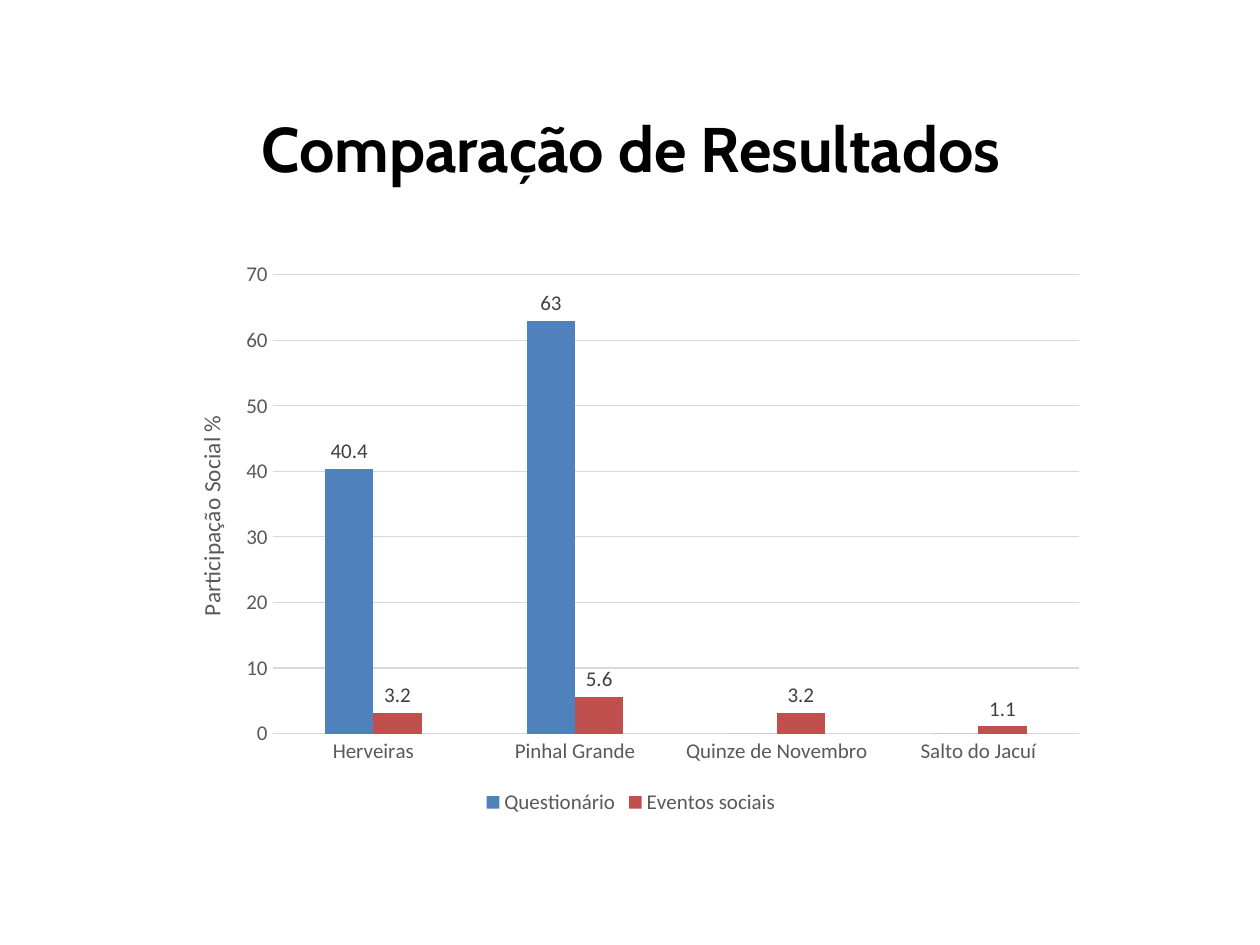
from dataclasses import dataclass

from pptx import Presentation
from pptx import util as u
from pptx.chart import data as cd
from pptx.dml.color import RGBColor
from pptx.enum import chart as ce, text as te
from pptx.oxml import parse_xml
from pptx.oxml.ns import nsdecls

PX = 914400 / 126
INK = {"title": "000000", "text": "595959", "label": "404040",
       "grid": "D9D9D9", "blue": "4F81BD", "red": "C0504D"}
TOWNS = ["Herveiras", "Pinhal Grande", "Quinze de Novembro", "Salto do Jacuí"]


@dataclass
class Bars:
    name: str
    vals: list[float]
    ink: str


SETS = [Bars("Questionário", [40.4, 63, 0, 0], "blue"),
        Bars("Eventos sociais", [3.2, 5.6, 3.2, 1.1], "red")]


def px(n: int) -> u.Emu:
    return u.Emu(round(n * PX))


def tint(ink: str) -> RGBColor:
    return RGBColor.from_string(INK[ink])


def style(font, size: float, ink: str, face: str = "Calibri", bold: bool = False) -> None:
    font.size, font.name, font.bold = u.Pt(size), face, bold
    font.color.rgb = tint(ink)


def rule(line) -> None:
    line.color.rgb = tint("grid")
    line.width = u.Pt(0.75)


def layout(inner: bool = False, **spots: float):
    """Manual chart layout; spots are fractions of the chart size."""
    tags = '<c:layoutTarget val="inner"/>' if inner else ""
    tags += "".join(f'<c:{k}Mode val="edge"/>' for k in "xy")
    tags += "".join(f'<c:{k} val="{v}"/>' for k, v in spots.items())
    return parse_xml(f'<c:layout {nsdecls("c")}><c:manualLayout>{tags}'
                     '</c:manualLayout></c:layout>')


def place(parent, node, after) -> None:
    for old in parent.findall(node.tag):
        parent.remove(old)
    if after is None:
        parent.insert(0, node)
    else:
        after.addnext(node)


def draw_title(slide) -> None:
    box = slide.shapes.title
    box.left, box.top, box.width, box.height = map(px, (139, 103, 984, 127))
    frame = box.text_frame
    frame.text = "Comparação de Resultados"
    frame.word_wrap = True
    frame.auto_size = te.MSO_AUTO_SIZE.NONE
    frame.vertical_anchor = te.MSO_ANCHOR.TOP
    para = frame.paragraphs[0]
    para.alignment = te.PP_ALIGN.CENTER
    style(para.runs[0].font, 36, "title", "Cabin", True)


def draw_axes(chart) -> None:
    cat, val = chart.category_axis, chart.value_axis
    for axis in (cat, val):
        axis.major_tick_mark = axis.minor_tick_mark = ce.XL_TICK_MARK.NONE
        style(axis.tick_labels.font, 12, "text")
    rule(cat.format.line)
    val.format.line.fill.background()
    val.minimum_scale, val.maximum_scale, val.major_unit = 0, 70, 10
    val.has_major_gridlines = True
    rule(val.major_gridlines.format.line)

    # Axis title, read upwards
    frame = val.axis_title.text_frame
    frame.text = "Participação Social %"
    style(frame.paragraphs[0].runs[0].font, 13.3, "text")
    body = frame._txBody.bodyPr
    body.set("rot", "-5400000")
    body.set("vert", "horz")
    title = val.axis_title._element
    place(title, layout(x=0.03, y=0.28), title.tx)


def draw_chart(slide) -> None:
    data = cd.CategoryChartData()
    data.categories = TOWNS
    for item in SETS:
        data.add_series(item.name, item.vals)
    chart = slide.shapes.add_chart(ce.XL_CHART_TYPE.COLUMN_CLUSTERED,
                                   *map(px, (163, 252, 936, 568)), data).chart
    style(chart.font, 10, "title")
    chart.has_title = False
    chart.has_legend = True
    chart.legend.position = ce.XL_LEGEND_POSITION.BOTTOM
    chart.legend.include_in_layout = False
    style(chart.legend.font, 12, "text")
    draw_axes(chart)

    # Columns, with a label on each value above zero
    plot = chart.plots[0]
    plot.gap_width, plot.overlap, plot.vary_by_categories = 219, 0, False
    for item, bars in zip(SETS, plot.series):
        bars.format.fill.solid()
        bars.format.fill.fore_color.rgb = tint(item.ink)
        bars.invert_if_negative = False
        tags = bars.data_labels
        tags.show_value = all(item.vals)
        style(tags.font, 12, "label")
        if not tags.show_value:
            for i, val in enumerate(item.vals):
                if val:
                    tag = bars.points[i].data_label
                    style(tag.font, 12, "label")
                    tag.position = ce.XL_LABEL_POSITION.OUTSIDE_END

    area = chart._chartSpace.chart.plotArea
    place(area, layout(True, x=0.117, y=0.04, w=0.862, h=0.808), None)


def main() -> None:
    deck = Presentation()
    deck.slide_width, deck.slide_height = px(1260), px(945)
    slide = deck.slides.add_slide(deck.slide_layouts[5])
    draw_title(slide)
    draw_chart(slide)
    deck.save("out.pptx")


if __name__ == "__main__":
    main()
